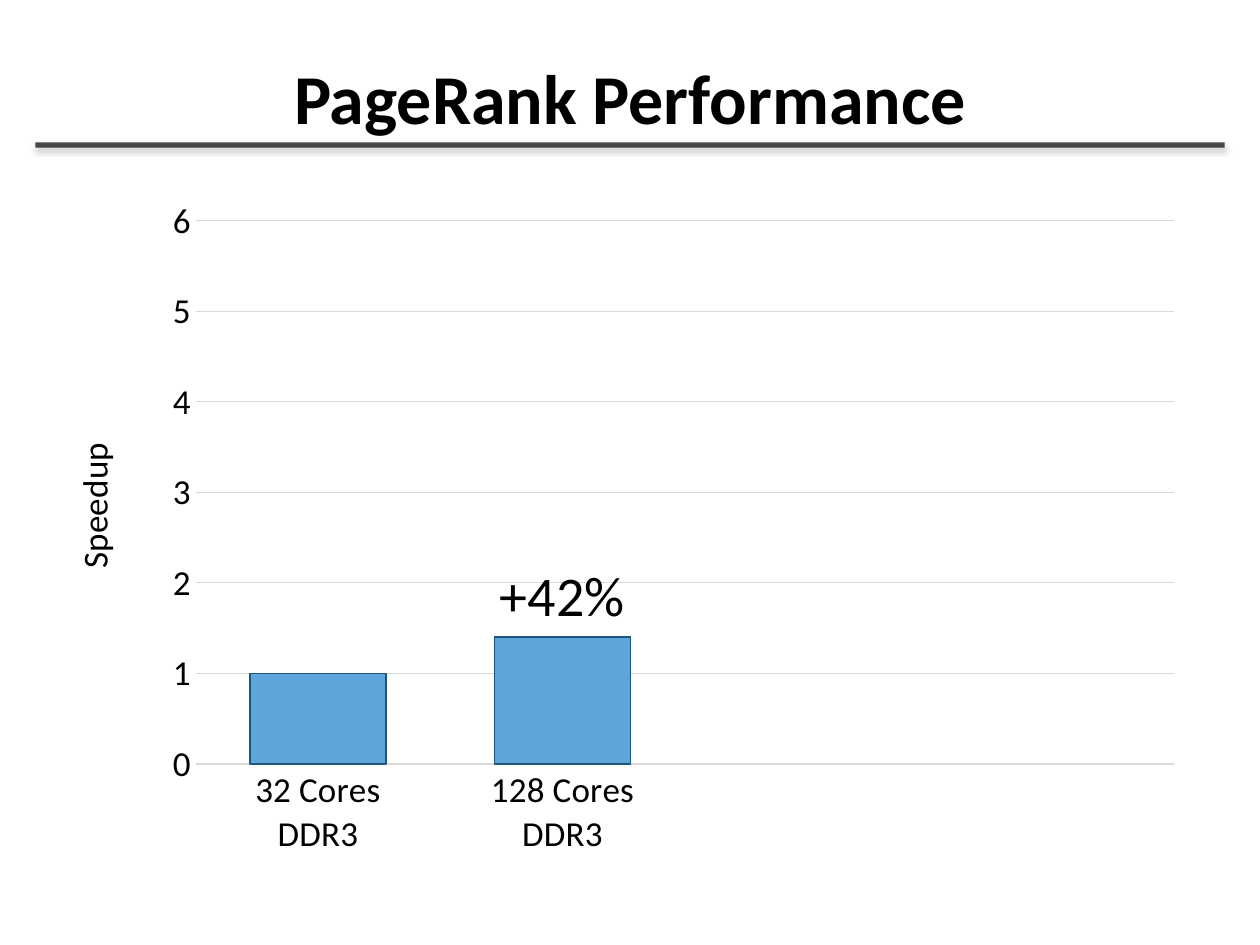
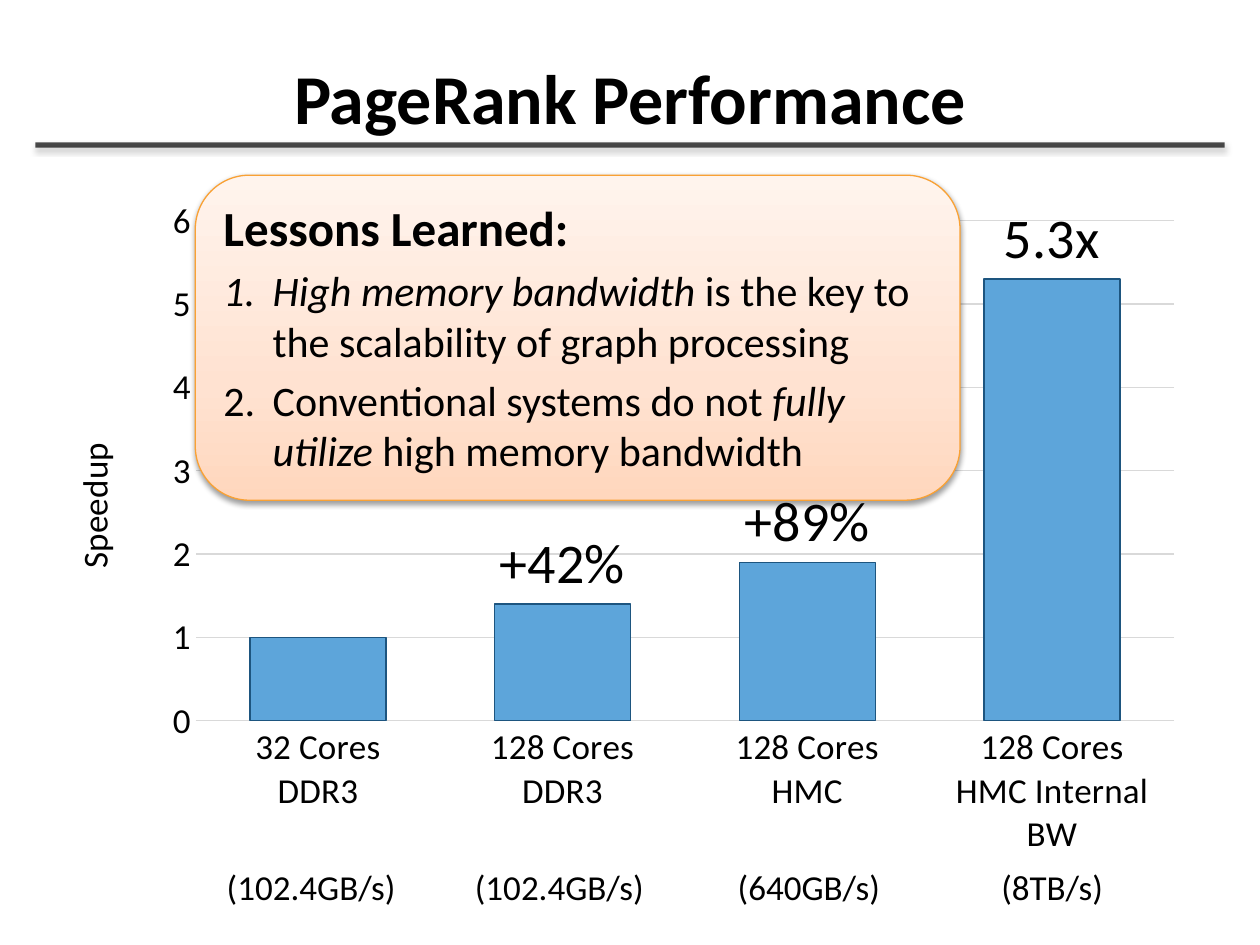
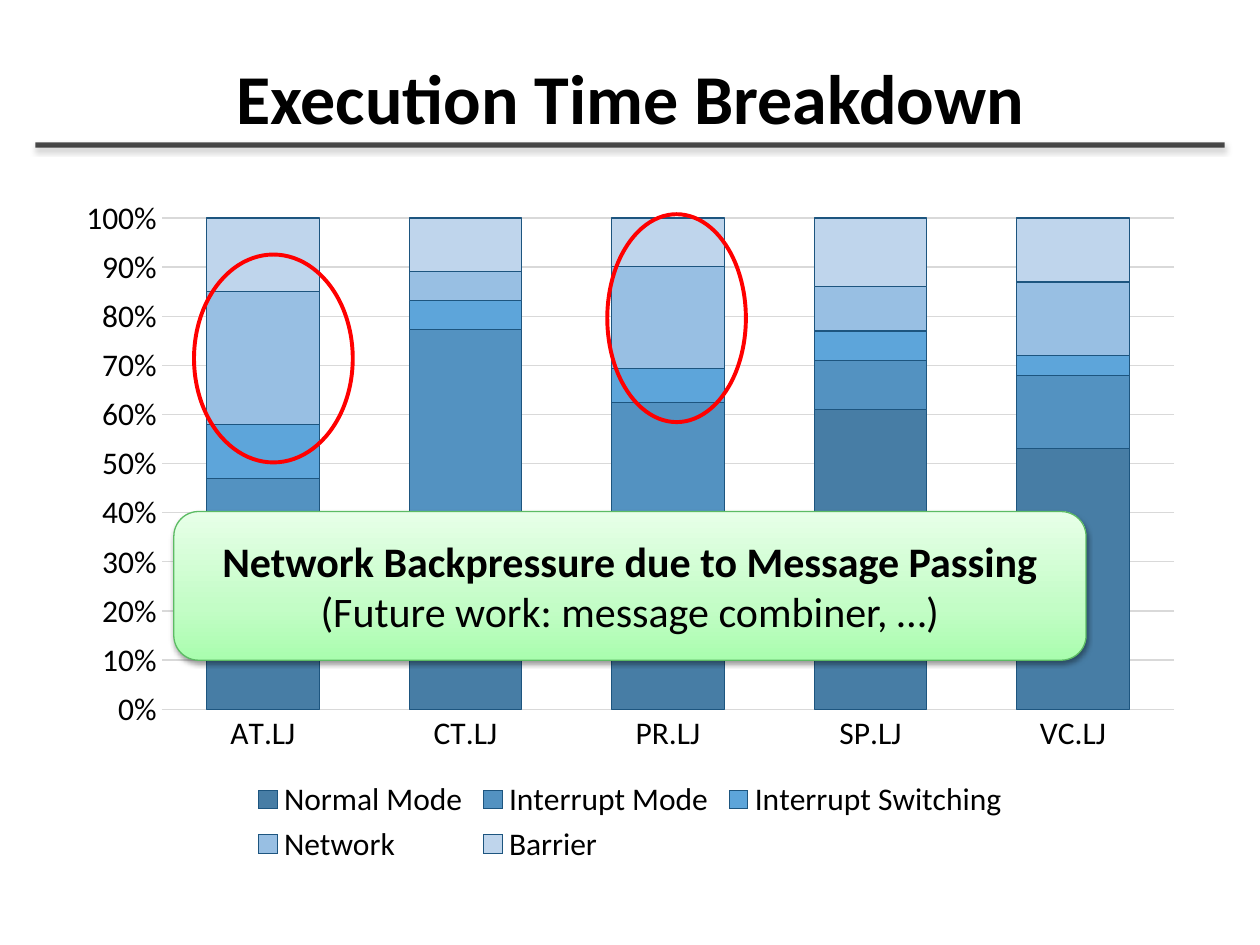
from copy import deepcopy
from dataclasses import dataclass

from lxml import etree
from pptx import Presentation
from pptx.chart.data import CategoryChartData
from pptx.dml.color import RGBColor
from pptx.enum.chart import XL_CHART_TYPE, XL_LABEL_POSITION, XL_LEGEND_POSITION, XL_TICK_MARK
from pptx.enum.shapes import MSO_CONNECTOR, MSO_SHAPE
from pptx.enum.text import MSO_ANCHOR, MSO_AUTO_SIZE, PP_ALIGN
from pptx.oxml.ns import qn
from pptx.util import Inches, Pt

CLUSTERED = XL_CHART_TYPE.COLUMN_CLUSTERED
STACKED = XL_CHART_TYPE.COLUMN_STACKED_100
OUTSIDE_END = XL_LABEL_POSITION.OUTSIDE_END
LEGEND_BOTTOM = XL_LEGEND_POSITION.BOTTOM
NO_TICK = XL_TICK_MARK.NONE
STRAIGHT = MSO_CONNECTOR.STRAIGHT
ROUNDED = MSO_SHAPE.ROUNDED_RECTANGLE
OVAL = MSO_SHAPE.OVAL
FIXED_SIZE = MSO_AUTO_SIZE.NONE
TOP, MIDDLE, BOTTOM = MSO_ANCHOR.TOP, MSO_ANCHOR.MIDDLE, MSO_ANCHOR.BOTTOM
LEFT, CENTER = PP_ALIGN.LEFT, PP_ALIGN.CENTER


@dataclass(frozen=True)
class Theme:
    font: str = "Calibri"
    ink: str = "000000"
    grid: str = "D9D9D9"
    bar_edge: str = "1D557F"
    mark: str = "FF0000"
    blues: tuple = ("477DA5", "5392C1", "5DA5DA", "98BFE3", "BFD5EC")
    orange: tuple = ("FFD7BD", "FFE2D1", "FFF4ED")
    orange_edge: str = "F9A134"
    green: tuple = ("A9FDAE", "C3FDC6", "E7FFE8")
    green_edge: str = "5CBB64"
    title: int = 40
    bar_label: int = 32
    heading: int = 28
    text: int = 24
    axis: int = 20
    small_axis: int = 18
    hairline: float = 0.75


@dataclass(frozen=True)
class Box:
    left: float
    top: float
    width: float
    height: float

    def inside(self, left, top, width, height):
        return Box(self.left + left, self.top + top, width, height)

    def lengths(self):
        return [Inches(n) for n in (self.left, self.top, self.width, self.height)]


THEME = Theme()
TITLE_BOX = Box(0.5, 0.3, 9, 0.85)
CHART_BOX = Box(0.5, 1.47, 9, 5.43)
RULE_BOX = Box(0.28, 1.15, 9.44, 0)

CORES = ["32 Cores\nDDR3", "128 Cores\nDDR3", "128 Cores\nHMC", "128 Cores\nHMC Internal BW"]
SPEEDUPS = [1, 1.4, 1.9, 5.3]
SPEEDUP_LABELS = ["", "+42%", "+89%", "5.3x"]
BANDWIDTHS = [("(102.4GB/s)", 1.19, 1.56), ("(102.4GB/s)", 3.16, 1.56),
              ("(640GB/s)", 5.25, 1.34), ("(8TB/s)", 7.34, 1.02)]
LESSONS = [
    [("High memory bandwidth", True), (" is the key to the scalability of graph processing", False)],
    [("Conventional systems do not ", False), ("fully utilize", True), (" high memory bandwidth", False)],
]
WORKLOADS = ["AT.LJ", "CT.LJ", "PR.LJ", "SP.LJ", "VC.LJ"]
TIME_SHARES = {
    "Normal Mode": [31, 38, 32, 61, 53],
    "Interrupt Mode": [16, 40, 31, 10, 15],
    "Interrupt Switching": [11, 6, 7, 6, 4],
    "Network": [27, 6, 21, 9, 15],
    "Barrier": [15, 11, 10, 14, 13],
}


def rgb(value):
    return RGBColor.from_string(value)


def style_font(font, size, bold=False):
    font.name, font.size, font.bold = THEME.font, Pt(size), bold
    font.color.rgb = rgb(THEME.ink)


def style_line(line, color, width):
    line.color.rgb = rgb(color)
    line.width = Pt(width)


def add_child(parent, tag, **attributes):
    return etree.SubElement(parent, qn(tag), {key: str(value) for key, value in attributes.items()})


def add_shadow(shape, distance, opacity):
    properties = shape.element.spPr
    effects = properties.find(qn("a:effectLst"))
    if effects is None:
        effects = add_child(properties, "a:effectLst")
    shadow = add_child(effects, "a:outerShdw", blurRad=Pt(3.1), dist=Pt(distance),
                       dir=90 * 60000, rotWithShape=0)
    color = add_child(shadow, "a:srgbClr", val=THEME.ink)
    add_child(color, "a:alpha", val=opacity * 1000)


def add_master_rule(deck, page, box):
    left, top, width, height = box.lengths()
    rule = page.shapes.add_connector(STRAIGHT, left, top, left + width, top + height)
    style_line(rule.line, THEME.ink, 3)
    color = rule.element.spPr.find(".//" + qn("a:srgbClr"))
    add_child(color, "a:alpha", val=70000)
    add_shadow(rule, 1.8, 35)
    deck.slide_master.shapes.element.append(rule.element)


def add_page(deck, title):
    page = deck.slides.add_slide(deck.slide_layouts[5])
    holder = page.shapes.title
    holder.left, holder.top, holder.width, holder.height = TITLE_BOX.lengths()
    frame = holder.text_frame
    frame.text = title
    frame.auto_size = FIXED_SIZE
    frame.vertical_anchor = BOTTOM
    para = frame.paragraphs[0]
    para.alignment = CENTER
    style_font(para.font, THEME.title, True)
    return page


def set_layout(parent, index, inner=False, **fractions):
    for old in parent.findall(qn("c:layout")):
        parent.remove(old)
    layout = etree.Element(qn("c:layout"))
    manual = add_child(layout, "c:manualLayout")
    if inner:
        add_child(manual, "c:layoutTarget", val="inner")
    for key in ("x", "y"):
        add_child(manual, f"c:{key}Mode", val="edge")
    for key, fraction in fractions.items():
        add_child(manual, f"c:{key}", val=round(fraction, 3))
    parent.insert(index, layout)


def add_columns(page, kind, box, plot_box, categories, rows, colors, size, overlap):
    data = CategoryChartData()
    data.categories = categories
    for name, values in rows.items():
        data.add_series(name, values)
    chart = page.shapes.add_chart(kind, *box.lengths(), data).chart
    chart.has_title = False
    chart.has_legend = False
    style_font(chart.font, size)
    set_layout(chart.element.find(".//" + qn("c:plotArea")), 0, True,
               x=(plot_box.left - box.left) / box.width, y=(plot_box.top - box.top) / box.height,
               w=plot_box.width / box.width, h=plot_box.height / box.height)
    for axis in (chart.category_axis, chart.value_axis):
        axis.major_tick_mark = axis.minor_tick_mark = NO_TICK
        style_font(axis.tick_labels.font, size)
    style_line(chart.category_axis.format.line, THEME.grid, THEME.hairline)
    chart.value_axis.format.line.fill.background()
    style_line(chart.value_axis.major_gridlines.format.line, THEME.grid, THEME.hairline)
    plot = chart.plots[0]
    plot.gap_width, plot.overlap, plot.vary_by_categories = 80, overlap, False
    for series, color in zip(plot.series, colors):
        series.format.fill.solid()
        series.format.fill.fore_color.rgb = rgb(color)
        style_line(series.format.line, THEME.bar_edge, THEME.hairline)
    return chart


def add_chart_text(frame, text, size):
    span = frame.paragraphs[0].add_run()
    span.text = text
    style_font(span.font, size)


def add_speedup_chart(page, box, shown, plot_height):
    hidden = len(CORES) - shown
    chart = add_columns(page, CLUSTERED, box, box.inside(1.05, 0.28, 7.77, plot_height),
                        CORES[:shown] + [""] * hidden,
                        {"Series 1": SPEEDUPS[:shown] + [None] * hidden},
                        [THEME.blues[2]], THEME.axis, -27)
    axis = chart.value_axis
    axis.minimum_scale, axis.maximum_scale, axis.major_unit = 0, 6, 1
    add_chart_text(axis.axis_title.text_frame, "Speedup", THEME.axis)
    axis_title = chart.element.find(".//" + qn("c:valAx")).find(qn("c:title"))
    set_layout(axis_title, 1, x=0, y=0.367)
    series = chart.plots[0].series[0]
    series.data_labels.show_value = False
    for index, text in enumerate(SPEEDUP_LABELS[:shown]):
        if text:
            label = series.points[index].data_label
            add_chart_text(label.text_frame, text, THEME.bar_label)
            label.position = OUTSIDE_END


def add_bandwidths(page, box):
    for text, left, width in BANDWIDTHS:
        label = page.shapes.add_textbox(*box.inside(left, 5.35, width, 0.44).lengths())
        label.text_frame.word_wrap = False
        para = label.text_frame.paragraphs[0]
        para.text = text
        para.alignment = CENTER
        style_font(para.font, THEME.axis)


def add_callout(page, box, colors, edge, anchor):
    callout = page.shapes.add_shape(ROUNDED, *box.lengths())
    callout.shadow.inherit = False
    callout.fill.gradient()
    callout.fill.gradient_angle = 90
    stops = callout.element.find(".//" + qn("a:gsLst"))
    stops.insert(1, deepcopy(stops[0]))
    for stop, color, position in zip(callout.fill.gradient_stops, colors, (0, 0.35, 1)):
        stop.color.rgb = rgb(color)
        stop.position = position
    style_line(callout.line, edge, THEME.hairline)
    add_shadow(callout, 1.6, 38)
    callout.text_frame.word_wrap = True
    callout.text_frame.vertical_anchor = anchor
    return callout.text_frame


def number_paragraph(para):
    properties = para._p.get_or_add_pPr()
    properties.set("marL", str(Inches(0.39)))
    properties.set("indent", str(-Inches(0.39)))
    add_child(properties, "a:buFont", typeface="+mj-lt")
    add_child(properties, "a:buAutoNum", type="arabicPeriod")


def add_lessons(page, box):
    frame = add_callout(page, box.inside(1.05, -0.08, 6.07, 2.58),
                        THEME.orange, THEME.orange_edge, TOP)
    heading = frame.paragraphs[0]
    heading.text = "Lessons Learned:"
    style_font(heading.font, THEME.heading, True)
    for lesson in LESSONS:
        para = frame.add_paragraph()
        for text, italic in lesson:
            span = para.add_run()
            span.text = text
            span.font.italic = italic
        number_paragraph(para)
        style_font(para.font, THEME.text)
    for para in frame.paragraphs:
        para.alignment = LEFT
        para.space_before = Pt(5)


def add_breakdown_chart(page, box):
    chart = add_columns(page, STACKED, box, box.inside(0.78, 0.26, 8.04, 3.9),
                        WORKLOADS, TIME_SHARES, THEME.blues, THEME.small_axis, 100)
    labels = chart.value_axis.tick_labels
    labels.number_format, labels.number_format_is_linked = "0%", False
    chart.has_legend = True
    chart.legend.position = LEGEND_BOTTOM
    chart.legend.include_in_layout = False
    style_font(chart.legend.font, THEME.small_axis)


def add_backpressure_note(page, box):
    frame = add_callout(page, box.inside(0.88, 2.59, 7.24, 1.18),
                        THEME.green, THEME.green_edge, MIDDLE)
    frame.text = "Network Backpressure due to Message Passing\n(Future work: message combiner, …)"
    for para, bold in zip(frame.paragraphs, (True, False)):
        para.alignment = CENTER
        style_font(para.font, THEME.text, bold)


def add_network_rings(page, box):
    for left, top, width in ((1.04, 0.55, 1.26), (4.32, 0.23, 1.1)):
        ring = page.shapes.add_shape(OVAL, *box.inside(left, top, width, 1.65).lengths())
        ring.shadow.inherit = False
        ring.fill.background()
        style_line(ring.line, THEME.mark, 2.25)


def main():
    deck = Presentation()
    deck.slide_width, deck.slide_height = Inches(10), Inches(7.5)

    page = add_page(deck, "PageRank Performance")
    add_master_rule(deck, page, RULE_BOX)
    add_speedup_chart(page, CHART_BOX, 2, 4.31)

    page = add_page(deck, "PageRank Performance")
    add_speedup_chart(page, CHART_BOX, 4, 3.97)
    add_bandwidths(page, CHART_BOX)
    add_lessons(page, CHART_BOX)

    page = add_page(deck, "Execution Time Breakdown")
    add_breakdown_chart(page, CHART_BOX)
    add_backpressure_note(page, CHART_BOX)
    add_network_rings(page, CHART_BOX)

    deck.save("out.pptx")


if __name__ == "__main__":
    main()
